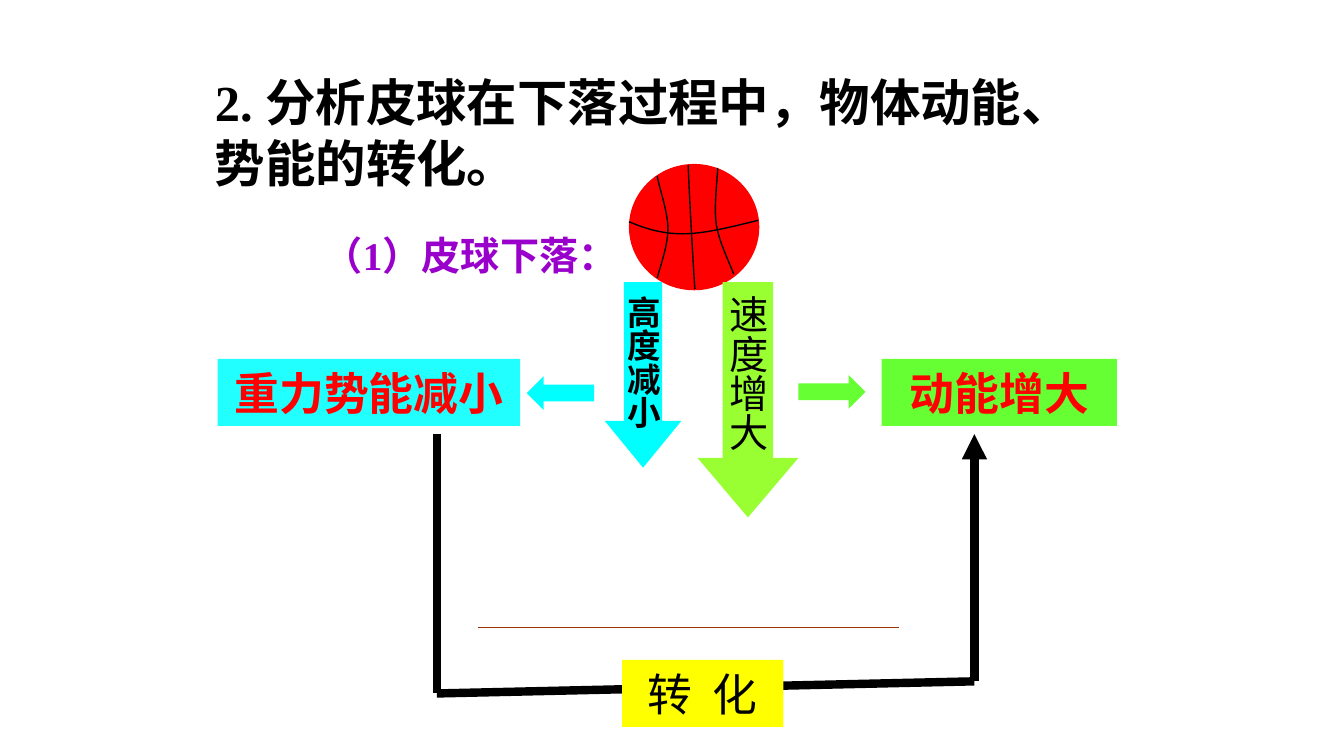
from dataclasses import dataclass
from typing import Optional

from lxml.etree import SubElement
from pptx import Presentation
from pptx.dml.color import RGBColor
from pptx.enum.shapes import MSO_CONNECTOR as CONN, MSO_SHAPE as SHAPE
from pptx.enum.text import MSO_ANCHOR as ANCHOR, PP_ALIGN as ALIGN
from pptx.oxml.ns import qn
from pptx.util import Inches, Pt

TIMES = "Times New Roman"
NOTO = "Noto Sans CJK SC"
STEPS = 12


@dataclass
class Label:
    runs: tuple[str, ...]
    size: float
    color: str = "000000"
    bold: bool = False
    font: str = TIMES
    vertical: bool = False
    space_gap: int = 0


@dataclass
class Block:
    kind: SHAPE
    box: tuple[float, float, float, float]
    fill: str
    label: Optional[Label] = None
    head: Optional[float] = None
    alpha: Optional[int] = None


@dataclass
class Stroke:
    start: tuple[float, float]
    end: tuple[float, float]
    color: str = "000000"
    width: float = 4.5
    arrow: bool = False


def rgb(value: str) -> RGBColor:
    return RGBColor.from_string(value)


def write(tf, label: Label, align: ALIGN, wrap: bool = True) -> None:
    tf.word_wrap = wrap
    if label.vertical:
        tf._txBody.bodyPr.set("vert", "eaVert")
    p = tf.paragraphs[0]
    p.alignment = align
    for text in label.runs:
        r = p.add_run()
        r.text = text
        r.font.size = Pt(label.size)
        r.font.bold = label.bold
        r.font.color.rgb = rgb(label.color)
        r.font.name = label.font
        rPr = r._r.get_or_add_rPr()
        SubElement(rPr, qn("a:ea")).set("typeface", NOTO)
        if text == " ":
            rPr.set("spc", str(label.space_gap))


def add_text(slide, box: tuple, label: Label, wrap: bool) -> None:
    sp = slide.shapes.add_textbox(*map(Inches, box))
    write(sp.text_frame, label, ALIGN.LEFT, wrap)


def add_block(slide, block: Block) -> None:
    sp = slide.shapes.add_shape(block.kind, *map(Inches, block.box))
    sp.shadow.inherit = False
    sp.fill.solid()
    sp.fill.fore_color.rgb = rgb(block.fill)
    sp.line.fill.background()
    if block.head is not None:
        sp.adjustments[0] = 0.5
        sp.adjustments[1] = block.head
    if block.alpha is not None:
        color = sp._element.spPr.find(".//" + qn("a:srgbClr"))
        SubElement(color, qn("a:alpha")).set("val", str(block.alpha * 1000))
    if block.label:
        tf = sp.text_frame
        tf.vertical_anchor = ANCHOR.MIDDLE
        write(tf, block.label, ALIGN.CENTER, not block.label.vertical)


def add_stroke(slide, stroke: Stroke) -> None:
    ends = map(Inches, stroke.start + stroke.end)
    cx = slide.shapes.add_connector(CONN.STRAIGHT, *ends)
    cx.line.color.rgb = rgb(stroke.color)
    cx.line.width = Pt(stroke.width)
    if stroke.arrow:
        SubElement(cx.line._get_or_add_ln(), qn("a:tailEnd")).set("type", "triangle")
    SubElement(cx._element.spPr, qn("a:effectLst"))


def bezier(points: tuple, t: float) -> tuple[float, float]:
    weights = ((1 - t) ** 3, 3 * t * (1 - t) ** 2, 3 * t * t * (1 - t), t**3)
    x, y = (sum(w * v for w, v in zip(weights, axis)) for axis in zip(*points))
    return x, y


def add_seam(slide, points: tuple) -> None:
    curve = [points[0]]
    for i in range(0, len(points) - 1, 3):
        segment = points[i : i + 4]
        curve += [bezier(segment, n / STEPS) for n in range(1, STEPS + 1)]
    (x, y), *rest = [(Inches(x), Inches(y)) for x, y in curve]
    builder = slide.shapes.build_freeform(x, y)
    builder.add_line_segments(rest, close=False)
    sp = builder.convert_to_shape()
    sp.shadow.inherit = False
    sp.fill.background()
    sp.line.color.rgb = rgb("000000")
    sp.line.width = Pt(0.75)


TITLE = Label(("2. 分析皮球在下落过程中，物体动能、势能的转化。",), 27, bold=True)
SUBTITLE = Label(("（1）皮球下落：",), 21, "9900CC", True)
BALL = Block(SHAPE.OVAL, (4.68, 1.22, 0.97, 0.94), "FF0000")
SEAMS = (
    ((4.89, 1.31), (4.9, 1.38), (4.97, 1.58), (4.97, 1.7),
     (4.97, 1.83), (4.91, 1.99), (4.89, 2.07)),
    ((5.34, 1.25), (5.34, 1.32), (5.31, 1.54), (5.33, 1.67),
     (5.35, 1.8), (5.43, 1.96), (5.46, 2.04)),
    ((4.68, 1.65), (4.8, 1.7), (4.92, 1.74), (5.08, 1.74),
     (5.24, 1.74), (5.44, 1.69), (5.64, 1.64)),
    ((5.12, 1.23), (5.12, 1.23), (5.14, 1.69), (5.17, 2.15)),
)
BLOCKS = (
    Block(SHAPE.DOWN_ARROW, (4.5, 2.1, 0.57, 1.38), "00FFFF",
          Label(("高度减小",), 18, bold=True, vertical=True), head=0.61),
    Block(SHAPE.DOWN_ARROW, (5.19, 2.1, 0.75, 1.75), "99FF33",
          Label(("速度增大",), 21, vertical=True), head=0.59),
    Block(SHAPE.RECTANGLE, (1.62, 2.67, 2.25, 0.5), "00FFFF",
          Label(("重力势能减小",), 24, "FF0000", True), alpha=87),
    Block(SHAPE.RECTANGLE, (6.56, 2.67, 1.75, 0.5), "66FF33",
          Label(("动能增大",), 24, "FF0000", True)),
    Block(SHAPE.LEFT_ARROW, (3.92, 2.8, 0.5, 0.25), "00FFFF", head=0.5),
    Block(SHAPE.RIGHT_ARROW, (5.94, 2.79, 0.5, 0.25), "66FF33", head=0.5),
)
STROKES = (
    Stroke((3.25, 3.23), (3.25, 5.16)),
    Stroke((3.25, 5.16), (7.25, 5.07)),
    Stroke((7.25, 5.07), (7.25, 3.23), arrow=True),
    Stroke((3.56, 4.67), (6.69, 4.67), "993300", 0.75),
)
CONVERSION = Block(SHAPE.RECTANGLE, (4.63, 4.91, 1.2, 0.5), "FFFF00",
                   Label(("转", " ", "化"), 24, font=NOTO, space_gap=540))


def main() -> None:
    prs = Presentation()
    prs.slide_width = Inches(10)
    prs.slide_height = prs.slide_width * 9 // 16
    s = prs.slides.add_slide(prs.slide_layouts[6])
    add_text(s, (1.5, 0.48, 6.75, 1), TITLE, True)
    add_block(s, BALL)
    for seam in SEAMS:
        add_seam(s, seam)
    for block in BLOCKS:
        add_block(s, block)
    for stroke in STROKES:
        add_stroke(s, stroke)
    add_block(s, CONVERSION)
    add_text(s, (2.31, 1.67, 2.39, 0.45), SUBTITLE, False)
    prs.save("out.pptx")


if __name__ == "__main__":
    main()
